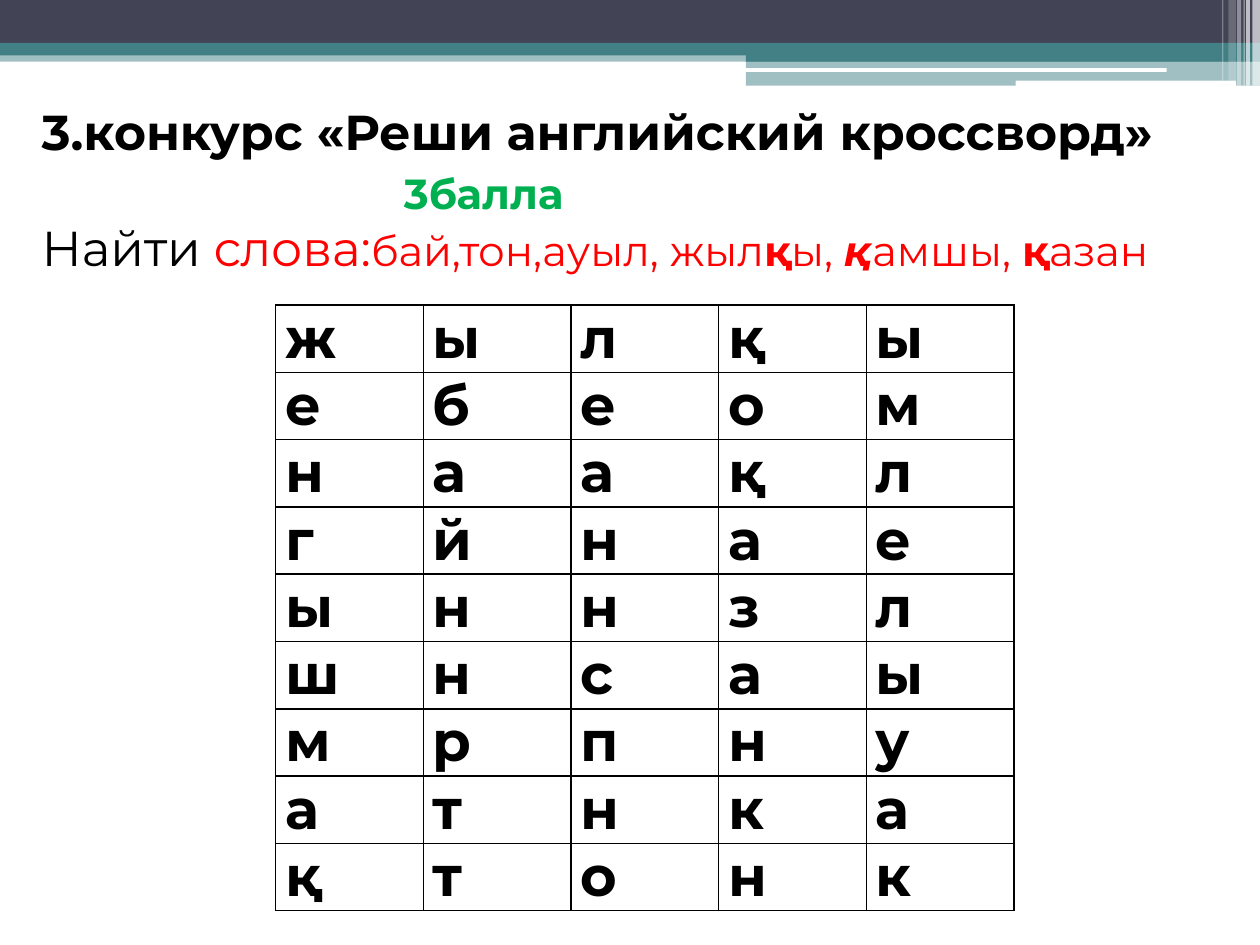
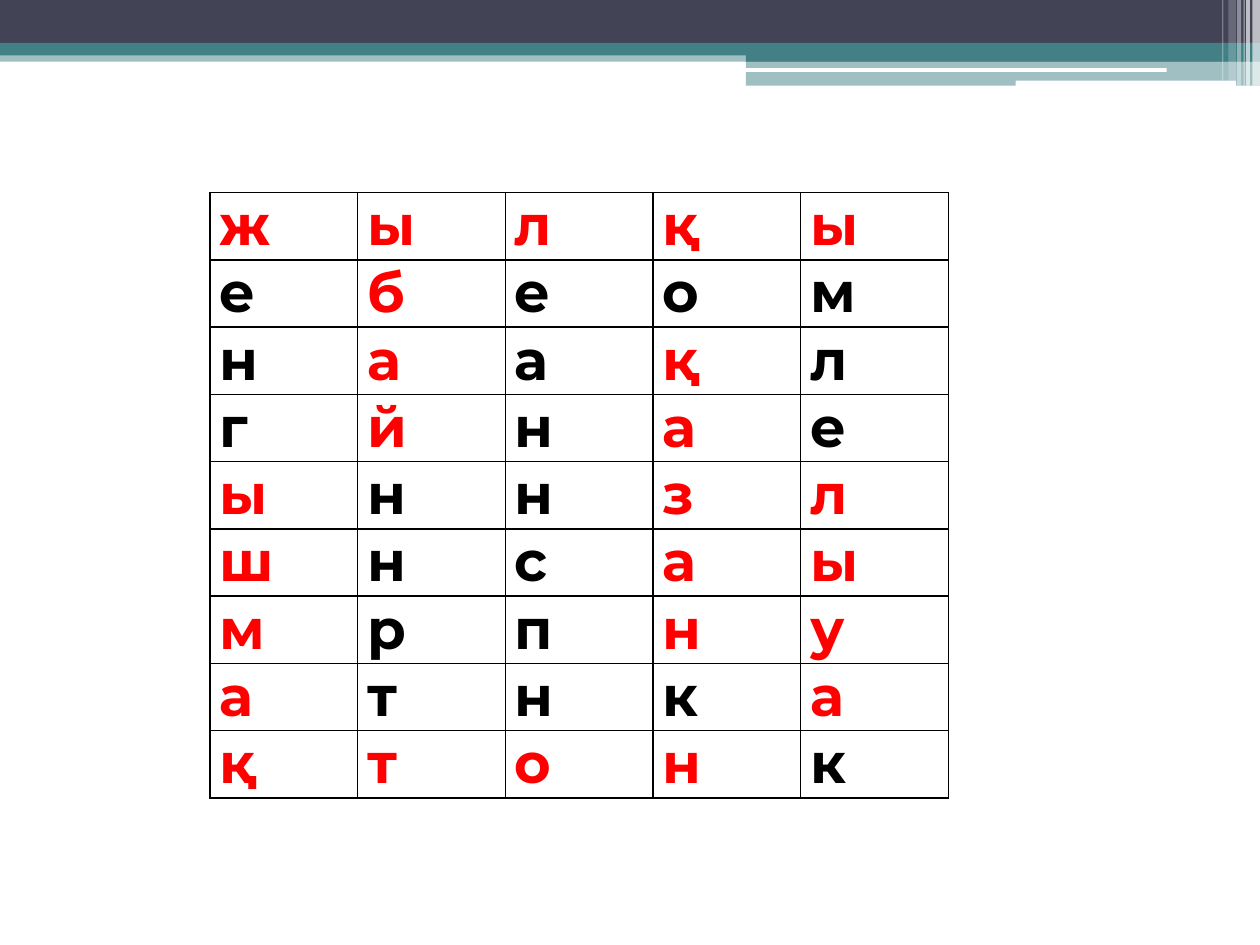
"""Build two crossword slides: the puzzle and its solution."""
from lxml.etree import SubElement
from pptx import Presentation
from pptx.dml.color import RGBColor
from pptx.enum.shapes import MSO_SHAPE
from pptx.enum.text import MSO_ANCHOR, MSO_AUTO_SIZE, PP_ALIGN
from pptx.oxml.ns import qn
from pptx.util import Pt

BLACK = RGBColor(0x00, 0x00, 0x00)
WHITE = RGBColor(0xFF, 0xFF, 0xFF)
RED = RGBColor(0xFF, 0x00, 0x00)
GREEN = RGBColor(0x00, 0xB0, 0x50)
TEAL = RGBColor(0x43, 0x80, 0x86)
SLATE = RGBColor(0x42, 0x44, 0x56)

TITLE_ONLY, BLANK = 5, 6
BANDS = [
    (0, 28.8, 720, 6.5, TEAL, 50),
    (0, 0, 720, 24.5, SLATE, 100),
    (0, 24.5, 720, 7.2, TEAL, 100),
    (426.2, 28.1, 293.8, 7.2, TEAL, 100),
    (426.2, 34.6, 293.8, 14.4, TEAL, 50),
]
BARS = [(425.5, 38.9, 241.2, 2.2), (580.3, 46.1, 126, 3.1)]
STRIPES = [
    (715.7, 4.3, 49, 65),
    (712.1, 2.2, 49, 65),
    (710.6, 0.7, 49, 60),
    (707, 2.2, 49, 40),
    (702, 4.3, 46.1, 20),
    (698.4, 0.7, 46.1, 30),
]
LETTERS = ["жылқы", "ебеом", "наақл", "гйнае", "ыннзл", "шнсаы", "мрпну", "атнка", "қтонк"]
ANSWERS = [
    ("жылқы", 0, 0, 0, 1),
    ("бай", 1, 1, 1, 0),
    ("қазан", 2, 3, 1, 0),
    ("ауыл", 7, 4, -1, 0),
    ("қамшы", 8, 0, -1, 0),
    ("тон", 8, 1, 0, 1),
]
TASK_LINES = [
    (0, 0, [("3.конкурс «Реши английский кроссворд»", 28, BLACK, True, False)]),
    (207, 4, [("3балла", 24, GREEN, True, False)]),
    (0, 0, [
        ("Найти ", 28, BLACK, False, False),
        ("слова:", 28, RED, False, False),
        ("бай,тон,ауыл, жыл", 24, RED, False, False),
        ("қ", 24, RED, True, False),
        ("ы, ", 24, RED, False, False),
        ("қ", 24, RED, True, True),
        ("амшы, ", 24, RED, False, False),
        ("қ", 24, RED, True, False),
        ("азан", 24, RED, False, False),
    ]),
]


class CrosswordDeck:
    """Holds the shared style and the current page."""

    font = "Montserrat"
    column_width = 84.4
    row_height = 38.4

    def __init__(self):
        self.deck = Presentation()
        self.deck.slide_width, self.deck.slide_height = Pt(720), Pt(540)
        self.page = None

    def add_page(self, layout):
        """Start a page with the decorated header."""
        self.page = self.deck.slides.add_slide(self.deck.slide_layouts[layout])
        for left, top, width, height, color, opacity in BANDS:
            self.add_band(left, top, width, height, color, opacity)
        for left, top, width, height in BARS:
            self.add_band(left, top, width, height, WHITE, kind=MSO_SHAPE.ROUNDED_RECTANGLE)
        for left, width, height, opacity in STRIPES:
            self.add_band(left, 0, width, height, WHITE, opacity)

    def add_band(self, left, top, width, height, color, opacity=100, kind=MSO_SHAPE.RECTANGLE):
        """Add a borderless shape, optionally see-through."""
        band = self.page.shapes.add_shape(kind, Pt(left), Pt(top), Pt(width), Pt(height))
        band.shadow.inherit = False
        band.line.fill.background()
        band.fill.solid()
        band.fill.fore_color.rgb = color
        if opacity < 100:
            fill_color = band.element.spPr.find(f"{qn('a:solidFill')}/{qn('a:srgbClr')}")
            SubElement(fill_color, qn("a:alpha"), val=str(opacity * 1000))

    def add_span(self, paragraph, text, size, color, bold=False, italic=False):
        """Add one styled run."""
        span = paragraph.add_run()
        span.text = text
        span.font.name = self.font
        span.font.size = Pt(size)
        span.font.color.rgb = color
        span.font.bold = bold
        span.font.italic = italic

    def add_title(self, lines):
        """Fill the title placeholder with indented lines of runs."""
        title = self.page.shapes.title
        title.left, title.top, title.width, title.height = Pt(16.6), Pt(39.6), Pt(703.4), Pt(159.8)
        frame = title.text_frame
        frame.word_wrap = True
        frame.auto_size = MSO_AUTO_SIZE.NONE
        frame.vertical_anchor = MSO_ANCHOR.MIDDLE
        frame.margin_left = frame.margin_right = Pt(7.2)
        frame.margin_top, frame.margin_bottom = Pt(3.6), Pt(26.7)
        for index, (indent, space, spans) in enumerate(lines):
            paragraph = frame.add_paragraph() if index else frame.paragraphs[0]
            paragraph.alignment = PP_ALIGN.LEFT
            paragraph.space_before = Pt(space)
            paragraph._p.get_or_add_pPr().set("marL", str(Pt(indent)))
            for span in spans:
                self.add_span(paragraph, *span)

    def add_grid(self, left, top, found=frozenset()):
        """Add the letter table, with found cells in red."""
        rows, columns = len(LETTERS), len(LETTERS[0])
        grid = self.page.shapes.add_table(
            rows, columns, Pt(left), Pt(top),
            Pt(columns * self.column_width), Pt(rows * self.row_height),
        ).table
        grid.first_row = grid.horz_banding = False
        for row, word in enumerate(LETTERS):
            grid.rows[row].height = Pt(self.row_height)
            for column, letter in enumerate(word):
                color = RED if (row, column) in found else BLACK
                self.fill_cell(grid.cell(row, column), letter, color)

    def fill_cell(self, cell, letter, color):
        """Write a letter into an outlined, unfilled cell."""
        cell.margin_left = cell.margin_right = Pt(5.4)
        cell.margin_top = cell.margin_bottom = Pt(0)
        properties = cell._tc.get_or_add_tcPr()
        for side in ("lnL", "lnR", "lnT", "lnB"):
            border = SubElement(properties, qn(f"a:{side}"), w=str(Pt(1)))
            fill = SubElement(border, qn("a:solidFill"))
            SubElement(fill, qn("a:srgbClr"), val=str(BLACK))
        cell.fill.background()
        paragraph = cell.text_frame.paragraphs[0]
        paragraph.line_spacing = Pt(self.row_height)
        self.add_span(paragraph, letter, 32, color, bold=True)


def main():
    """Build and save the deck."""
    crossword = CrosswordDeck()
    crossword.add_page(TITLE_ONLY)
    crossword.add_title(TASK_LINES)
    crossword.add_grid(157.5, 174.4)

    found = {
        (row + step * down, column + step * across)
        for word, row, column, down, across in ANSWERS
        for step in range(len(word))
    }
    crossword.add_page(BLANK)
    crossword.add_grid(120, 110, found)
    crossword.deck.save("out.pptx")


if __name__ == "__main__":
    main()
